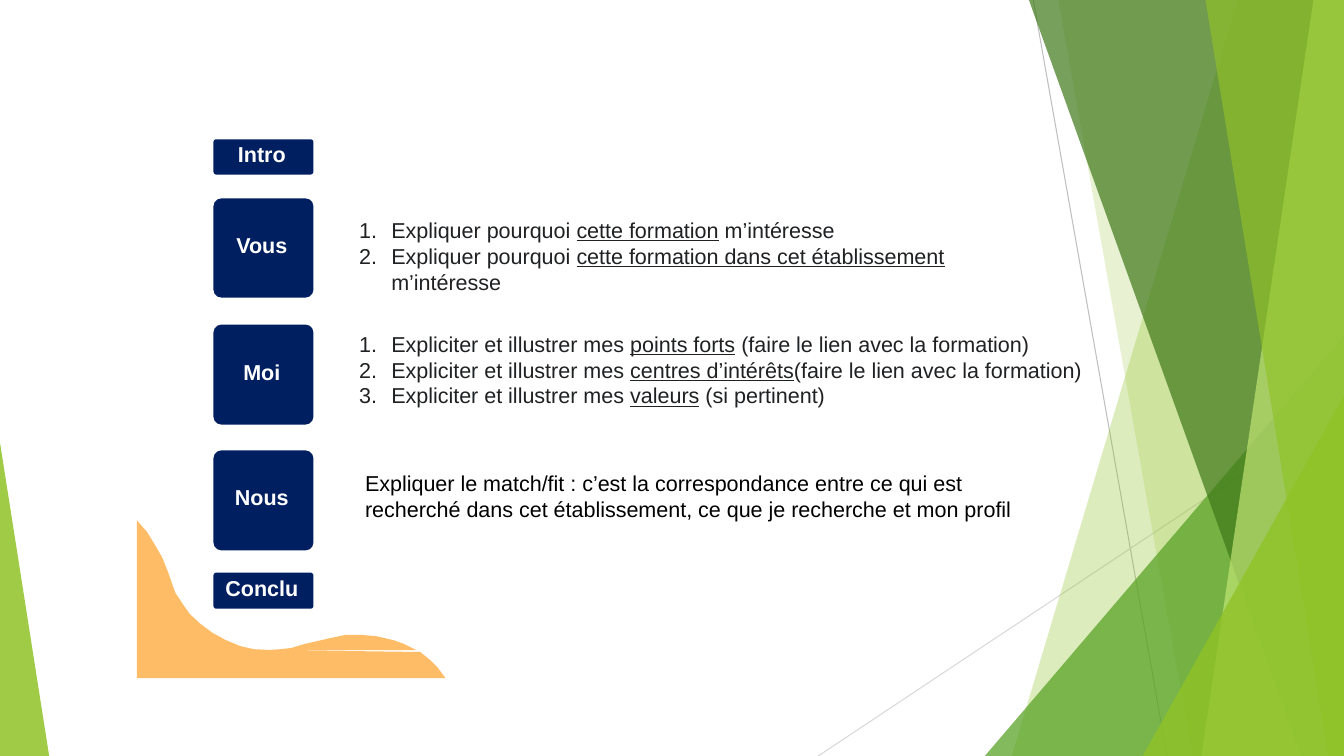
from lxml.etree import SubElement
from pptx import Presentation
from pptx.dml.color import RGBColor
from pptx.enum.shapes import MSO_CONNECTOR, MSO_SHAPE
from pptx.enum.text import MSO_ANCHOR, MSO_AUTO_SIZE, PP_ALIGN
from pptx.oxml.ns import qn
from pptx.util import Cm, Pt

WIDTH, HEIGHT = 33.87, 19.05
GREEN, NAVY, ORANGE = "90C226", "001F60", "FFBC67"

# x of the slanted edge at the top and bottom, colour, opacity in percent
BACK_FACETS = [(31.19, 25.5, GREEN, 30), (26.67, 30.05, GREEN, 20)]
FRONT_FACETS = [
    (25.93, 32.79, "3F7819", 70),
    (33.1, 30.28, "C0E474", 70),
    (30.38, 33.48, GREEN, 65),
]

# label, top, height
STEPS = [
    ("Intro", 3.51, 0.89),
    ("Vous", 5, 2.5),
    ("Moi", 8.18, 2.52),
    ("Nous", 11.35, 2.52),
    ("Conclu", 14.43, 0.91),
]

# Underlined words stand between underscores
YOU_POINTS = [
    "Expliquer pourquoi _cette formation_ m’intéresse",
    "Expliquer pourquoi _cette formation dans cet établissement_ m’intéresse",
]
ME_POINTS = [
    "Expliciter et illustrer mes _points forts_ (faire le lien avec la formation)",
    "Expliciter et illustrer mes _centres d’intérêts_(faire le lien avec la formation)",
    "Expliciter et illustrer mes _valeurs_ (si pertinent)",
]
MATCH = (
    "Expliquer le match/fit : c’est la correspondance entre ce qui est "
    "recherché dans cet établissement, ce que je recherche et mon profil"
)

CREST = [
    (10.49, 16.38), (10.19, 16.23), (9.91, 16.13), (9.47, 16.03), (9.12, 16),
    (8.71, 16), (8.33, 16.08), (7.67, 16.23), (7.34, 16.33), (7.06, 16.36),
    (6.81, 16.38),
]
SLOPE = [
    (11.23, 17.09), (11.02, 16.81), (10.85, 16.64), (10.59, 16.43),
    (6.81, 16.38), (6.4, 16.36), (6.05, 16.28), (5.69, 16.13), (5.36, 15.95),
    (5.05, 15.72), (4.78, 15.47), (4.6, 15.21), (4.42, 14.94), (4.32, 14.66),
    (4.24, 14.43), (4.09, 14.05), (3.91, 13.74), (3.71, 13.41),
    (3.45, 13.11), (3.45, 17.09),
]


def color(code):
    return RGBColor.from_string(code)


def apply(target, values):
    for name, value in values.items():
        setattr(target, name, value)


class Deck:
    font = {"name": "Arial", "size": Pt(15.4), "bold": False}
    frame = {
        "word_wrap": True,
        "auto_size": MSO_AUTO_SIZE.NONE,
        "vertical_anchor": MSO_ANCHOR.TOP,
        "margin_left": 0,
        "margin_top": Cm(0.03),
        "margin_right": 0,
        "margin_bottom": 0,
    }
    paragraph = {
        "space_before": Pt(0),
        "line_spacing": Pt(18.4),
        "alignment": PP_ALIGN.LEFT,
    }

    def __init__(self):
        self.presentation = Presentation()
        self.presentation.slide_width = Cm(WIDTH)
        self.presentation.slide_height = Cm(HEIGHT)
        layout = self.presentation.slide_layouts[3]
        self.slide = self.presentation.slides.add_slide(layout)
        self.shapes = self.slide.shapes
        title = self.shapes.title.element
        title.getparent().remove(title)

    def paint(self, shape, fill, opacity=100):
        shape.shadow.inherit = False
        shape.fill.solid()
        shape.fill.fore_color.rgb = color(fill)
        shape.line.fill.background()
        if opacity < 100:
            tint = shape.element.spPr.find(".//" + qn("a:srgbClr"))
            SubElement(tint, qn("a:alpha")).set("val", str(opacity * 1000))

    def ray(self, start, end, stroke):
        points = [Cm(value) for value in start + end]
        line = self.shapes.add_connector(MSO_CONNECTOR.STRAIGHT, *points)
        line.line.color.rgb = color(stroke)
        line.line.width = Pt(0.75)
        SubElement(line.element.spPr, qn("a:effectLst"))

    def outline(self, contours, fill, opacity=100):
        builder = None
        for contour in contours:
            start, *rest = [(Cm(x), Cm(y)) for x, y in contour]
            if builder is None:
                builder = self.shapes.build_freeform(*start)
            else:
                builder.move_to(*start)
            builder.add_line_segments(rest, close=True)
        self.paint(builder.convert_to_shape(), fill, opacity)

    def facet(self, top_x, bottom_x, fill, opacity):
        """Draw a panel from a slanted edge to the right side of the slide."""
        corners = [(top_x, 0), (WIDTH, 0), (WIDTH, HEIGHT), (bottom_x, HEIGHT)]
        self.outline([corners], fill, opacity)

    def corner(self, left, top, width, apex, fill, opacity):
        """Draw a right triangle that stands on the bottom of the slide."""
        triangle = self.shapes.add_shape(
            MSO_SHAPE.ISOSCELES_TRIANGLE,
            Cm(left), Cm(top), Cm(width), Cm(HEIGHT - top),
        )
        triangle.adjustments[0] = apex
        self.paint(triangle, fill, opacity)

    def add_text(self, paragraph, text, ink, **font):
        for index, part in enumerate(text.split("_")):
            run = paragraph.add_run()
            run.text = part
            apply(run.font, {**self.font, "underline": index % 2 == 1, **font})
            run.font.color.rgb = color(ink)

    def step(self, label, top, height):
        tile = self.shapes.add_shape(
            MSO_SHAPE.ROUNDED_RECTANGLE, Cm(5.38), Cm(top), Cm(2.52), Cm(height)
        )
        tile.adjustments[0] = 0.08
        self.paint(tile, NAVY)
        middle = {
            "vertical_anchor": MSO_ANCHOR.MIDDLE,
            "margin_top": 0,
            "margin_right": Cm(0.08),
            "margin_bottom": Cm(0.16),
        }
        apply(tile.text_frame, {**self.frame, **middle})
        paragraph = tile.text_frame.paragraphs[0]
        paragraph.alignment = PP_ALIGN.CENTER
        self.add_text(paragraph, label, "FFFFFF", bold=True)

    def numbered(self, slot, points, box):
        body = self.slide.placeholders[slot]
        body.left, body.top, body.width, body.height = [Cm(v) for v in box]
        body.element.getparent().append(body.element)  # in front of the facets
        frame = body.text_frame
        apply(frame, self.frame)
        for index, point in enumerate(points):
            paragraph = frame.add_paragraph() if index else frame.paragraphs[0]
            apply(paragraph, self.paragraph)
            properties = paragraph._p.get_or_add_pPr()
            properties.set("marL", str(Cm(0.84)))
            properties.set("indent", str(Cm(-0.81)))
            number = SubElement(properties, qn("a:buAutoNum"))
            number.set("type", "arabicPeriod")
            self.add_text(paragraph, point, "1F2123")

    def note(self, text, box):
        frame = self.shapes.add_textbox(*[Cm(v) for v in box]).text_frame
        apply(frame, self.frame)
        apply(frame.paragraphs[0], self.paragraph)
        self.add_text(frame.paragraphs[0], text, "000000")


def main():
    deck = Deck()
    deck.ray((26.04, 0), (29.41, HEIGHT), "BFBFBF")
    deck.ray((WIDTH, 10.24), (20.62, HEIGHT), "D9D9D9")
    for facet in BACK_FACETS:
        deck.facet(*facet)
    deck.corner(24.82, 8.46, 9.05, 1, "54A021", 72)
    for facet in FRONT_FACETS:
        deck.facet(*facet)
    deck.corner(28.8, 9.98, 5.07, 1, GREEN, 80)
    deck.corner(0, 11.15, 1.24, 0, GREEN, 85)

    for step in STEPS:
        deck.step(*step)
    deck.numbered(1, YOU_POINTS, (9.02, 5.44, 15.01, 2.06))
    deck.numbered(2, ME_POINTS, (9.02, 8.31, 18.6, 1.98))
    deck.note(MATCH, (9.2, 11.81, 16.31, 1.4))
    deck.outline([CREST, SLOPE], ORANGE)
    deck.presentation.save("out.pptx")


if __name__ == "__main__":
    main()
